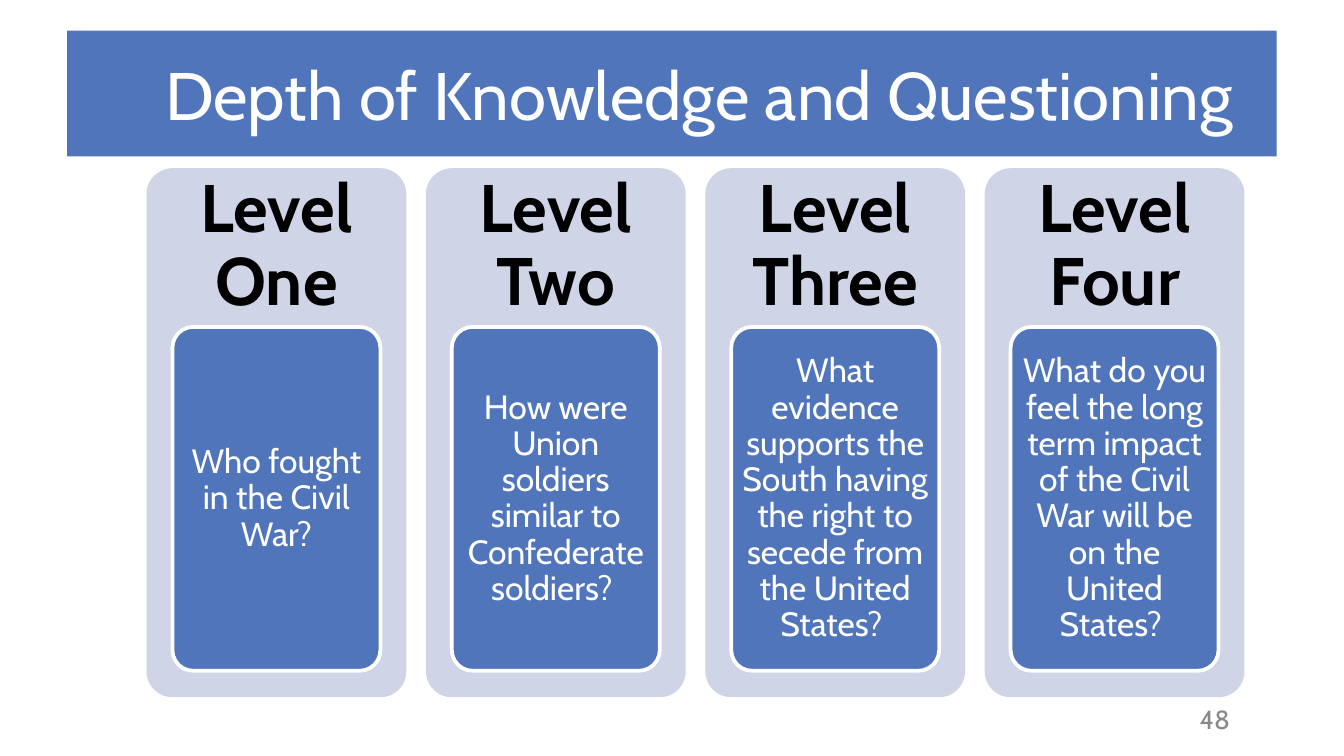
import pptx
import pptx.util
import pptx.dml.color
import pptx.enum.shapes
import pptx.enum.text

Cm = pptx.util.Cm
Pt = pptx.util.Pt
Shape = pptx.enum.shapes.MSO_SHAPE


def color(value):
    return pptx.dml.color.RGBColor.from_string(value)


def write(box, text, size, ink, margins, bold=False, spacing=1.0):
    frame = box.text_frame
    frame.word_wrap = True
    frame.vertical_anchor = pptx.enum.text.MSO_ANCHOR.MIDDLE
    frame.margin_left, frame.margin_top, frame.margin_right, frame.margin_bottom = map(Cm, margins)
    para = frame.paragraphs[0]
    para.text = text
    para.alignment = pptx.enum.text.PP_ALIGN.CENTER
    para.line_spacing = spacing
    para.font.name = "Cabin"
    para.font.size = Pt(size)
    para.font.bold = bold
    para.font.color.rgb = color(ink)


deck = pptx.Presentation()
deck.slide_width = Cm(25.4)
deck.slide_height = Cm(14.29)
page = deck.slides.add_slide(deck.slide_layouts[6])

number = page.shapes.add_textbox(Cm(21.59), Cm(13.21), Cm(2.74), Cm(0.76))
write(number, "48", 14, "888888", (0.25, 0.13, 0.25, 0.13))

levels = [
    ("Level One", "Who fought in the Civil War?"),
    ("Level Two", "How were Union soldiers similar to Confederate soldiers? "),
    ("Level Three", "What evidence supports the South having the right to secede from the United States? "),
    ("Level Four", "What do you feel the long term impact of the Civil War will be on the United States? "),
]

for index, (level, question) in enumerate(levels):
    left = 2.77 + index * 5.28

    panel = page.shapes.add_shape(Shape.ROUNDED_RECTANGLE, Cm(left), Cm(3.18), Cm(4.91), Cm(10))
    panel.adjustments[0] = 0.1
    panel.shadow.inherit = False
    panel.fill.solid()
    panel.fill.fore_color.rgb = color("CFD5E7")
    panel.line.fill.background()

    heading = page.shapes.add_textbox(Cm(left), Cm(3.18), Cm(4.91), Cm(3))
    write(heading, level, 36, "000000", (0.38, 0.38, 0.38, 0.38), bold=True, spacing=0.9)

    card = page.shapes.add_shape(Shape.ROUNDED_RECTANGLE, Cm(left + 0.49), Cm(6.18), Cm(3.93), Cm(6.5))
    card.adjustments[0] = 0.1
    card.shadow.inherit = False
    card.fill.solid()
    card.fill.fore_color.rgb = color("5075BA")
    card.line.color.rgb = color("FFFFFF")
    card.line.width = Pt(2)
    write(card, question, 18, "FFFFFF", (0.01, 0, 0.01, 0), spacing=0.9)

banner = page.shapes.add_shape(Shape.RECTANGLE, Cm(1.27), Cm(0.58), Cm(22.86), Cm(2.38))
banner.shadow.inherit = False
banner.fill.solid()
banner.fill.fore_color.rgb = color("5075BB")
banner.line.fill.background()
write(banner, "Depth of Knowledge and Questioning", 36, "FFFFFF", (1.27, 0.13, 0.25, 0.13))

deck.save("out.pptx")
